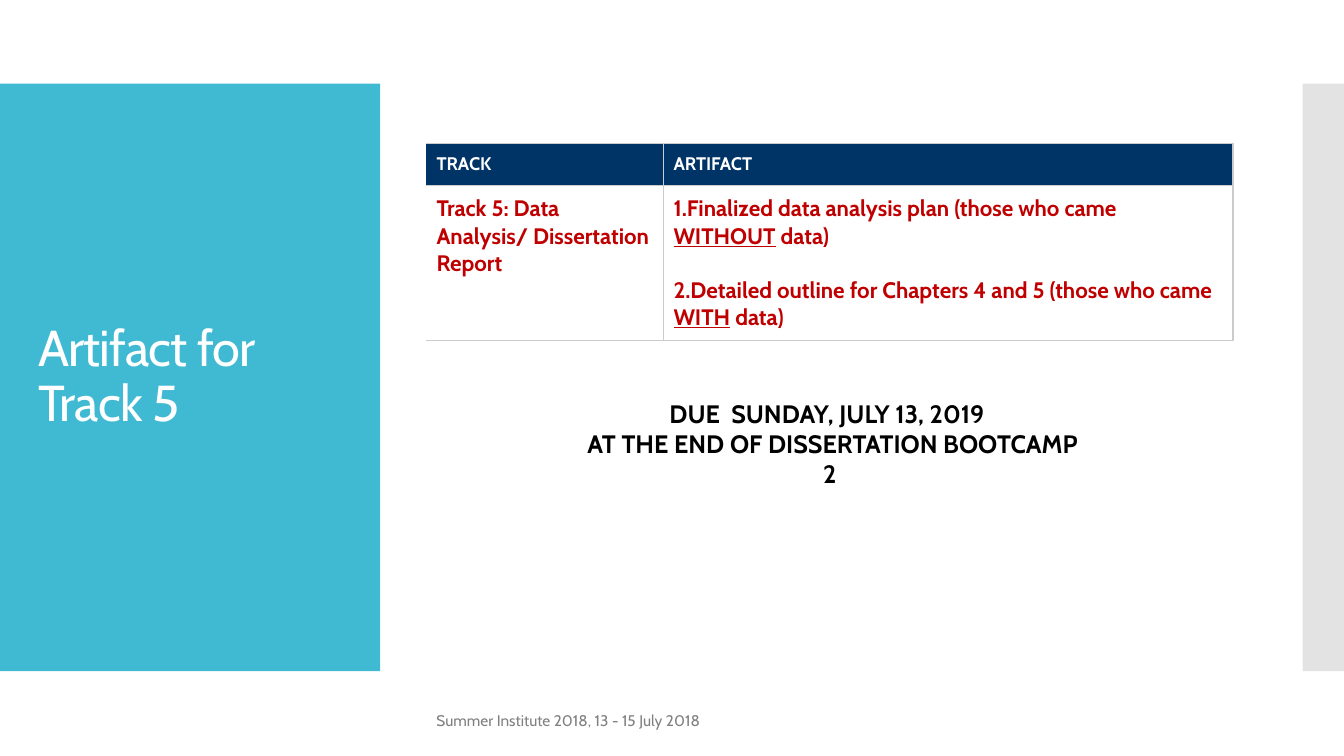
from dataclasses import dataclass

from pptx import Presentation
from pptx.dml.color import RGBColor
from pptx.enum.shapes import MSO_SHAPE
from pptx.enum.text import MSO_ANCHOR, MSO_AUTO_SIZE, PP_ALIGN
from pptx.oxml import parse_xml
from pptx.oxml.ns import nsdecls, qn
from pptx.util import Inches, Pt

RECTANGLE = MSO_SHAPE.RECTANGLE
TOP, MIDDLE = MSO_ANCHOR.TOP, MSO_ANCHOR.MIDDLE
LEFT, CENTER = PP_ALIGN.LEFT, PP_ALIGN.CENTER
NO_AUTOSIZE = MSO_AUTO_SIZE.NONE
TITLE_ONLY = 5
PLAIN_TABLE_STYLE = "{2D5ABB26-0587-4C30-8999-92F81FD0307C}"


@dataclass(frozen=True)
class Theme:
    font: str = "Cabin"
    panel: str = "40BAD2"
    edge: str = "C8C8C8"
    header: str = "003366"
    rule: str = "CCCCCC"
    white: str = "FFFFFF"
    accent: str = "C00000"
    ink: str = "000000"
    muted: str = "808080"
    title_size: int = 36
    due_size: int = 18
    body_size: int = 16
    header_size: int = 13
    footer_size: int = 11


THEME = Theme()


def write_text(frame, paragraphs, size, color, bold=False, align=LEFT, anchor=TOP,
               line_spacing=None, gap=0, numbered=False, tracking=None):
    frame.word_wrap = True
    frame.vertical_anchor = anchor
    for index, parts in enumerate(paragraphs):
        paragraph = frame.paragraphs[0] if index == 0 else frame.add_paragraph()
        paragraph.alignment = align
        if line_spacing:
            paragraph.line_spacing = line_spacing
        if index and gap:
            paragraph.space_before = Pt(gap)
        if numbered:
            properties = paragraph._p.get_or_add_pPr()
            properties.set("marL", "0")
            properties.set("indent", "0")
            properties.append(parse_xml(
                f'<a:buAutoNum {nsdecls("a")} type="arabicPeriod"/>'))
        for part_index, part in enumerate(parts):
            run = paragraph.add_run()
            run.text = part
            font = run.font
            font.name, font.size, font.bold = THEME.font, Pt(size), bold
            font.color.rgb = RGBColor.from_string(color)
            if part_index % 2:
                font.underline = True
            if tracking:
                run._r.get_or_add_rPr().set("spc", str(tracking))


def add_band(slide, box, color, opacity=100):
    band = slide.shapes.add_shape(RECTANGLE, *map(Inches, box))
    band.shadow.inherit = False
    band.line.fill.background()
    band.fill.solid()
    band.fill.fore_color.rgb = RGBColor.from_string(color)
    if opacity < 100:
        band.element.spPr.find(f'{qn("a:solidFill")}/{qn("a:srgbClr")}').append(
            parse_xml(f'<a:alpha {nsdecls("a")} val="{opacity * 1000}"/>'))
    slide.shapes.title.element.addprevious(band.element)


def add_title_panel(slide, box):
    left, top, width, height = box
    add_band(slide, box, THEME.panel)
    title = slide.shapes.title
    title.left, title.top = Inches(left + 0.28), Inches(top + 0.4)
    title.width, title.height = Inches(width - 0.55), Inches(height - 0.8)
    title.text_frame.auto_size = NO_AUTOSIZE
    write_text(title.text_frame, [["Artifact for Track 5"]], THEME.title_size,
               THEME.white, anchor=MIDDLE, line_spacing=0.9, tracking=-60)


def format_cell(cell, fill, sides):
    cell.margin_left = cell.margin_right = Inches(0.1)
    cell.margin_top = cell.margin_bottom = Inches(0.1)
    for side in sides:
        cell._tc.get_or_add_tcPr().append(parse_xml(
            f'<a:ln{side} {nsdecls("a")} w="12700"><a:solidFill>'
            f'<a:srgbClr val="{THEME.rule}"/></a:solidFill></a:ln{side}>'))
    cell.fill.solid()
    cell.fill.fore_color.rgb = RGBColor.from_string(fill)


def add_artifact_table(slide, box):
    left, top, width, height = box
    header_height, track_width = 0.41, 2.35
    frame = slide.shapes.add_table(2, 2, *map(Inches, box))
    frame.element.find(f'.//{qn("a:tableStyleId")}').text = PLAIN_TABLE_STYLE
    table = frame.table
    for column, size in zip(table.columns, (track_width, width - track_width)):
        column.width = Inches(size)
    for row, size in zip(table.rows, (header_height, height - header_height)):
        row.height = Inches(size)

    rows = [
        ([["TRACK"]], [["ARTIFACT"]]),
        ([["Track 5: Data Analysis/ Dissertation Report"]],
         [["Finalized data analysis plan (those who came ", "WITHOUT", " data)"],
          ["Detailed outline for Chapters 4 and 5 (those who came ", "WITH", " data)"]]),
    ]
    looks = [(THEME.header, THEME.header_size, THEME.white),
             (THEME.white, THEME.body_size, THEME.accent)]
    for row_index, (texts, (fill, size, color)) in enumerate(zip(rows, looks)):
        for column_index, paragraphs in enumerate(texts):
            cell = table.cell(row_index, column_index)
            format_cell(cell, fill, "LRTB" if column_index else "RTB")
            write_text(cell.text_frame, paragraphs, size, color, bold=True, gap=19.3,
                       anchor=MIDDLE if column_index else TOP,
                       numbered=len(paragraphs) > 1)
            cell.vertical_anchor = MIDDLE if column_index else TOP


def add_due_note(slide, box):
    note = slide.shapes.add_textbox(*map(Inches, box))
    write_text(note.text_frame,
               [["DUE  SUNDAY, JULY 13, 2019 "], [" AT THE END OF DISSERTATION BOOTCAMP 2"]],
               THEME.due_size, THEME.ink, bold=True, align=CENTER)


def add_footer(slide, box):
    footer = slide.shapes.add_textbox(*map(Inches, box))
    write_text(footer.text_frame, [["Summer Institute 2018, 13 - 15 July 2018"]],
               THEME.footer_size, THEME.muted, anchor=MIDDLE)


def main():
    presentation = Presentation()
    presentation.slide_width, presentation.slide_height = Inches(13.33), Inches(7.5)
    slide = presentation.slides.add_slide(presentation.slide_layouts[TITLE_ONLY])
    add_title_panel(slide, (0, 0.83, 3.77, 5.83))
    add_band(slide, (12.92, 0.83, 0.41, 5.83), THEME.edge, opacity=50)
    add_artifact_table(slide, (4.23, 1.42, 8, 1.95))
    add_footer(slide, (4.23, 6.95, 6.46, 0.4))
    add_due_note(slide, (5.63, 3.9, 5.2, 1.02))
    presentation.save("out.pptx")


if __name__ == "__main__":
    main()
